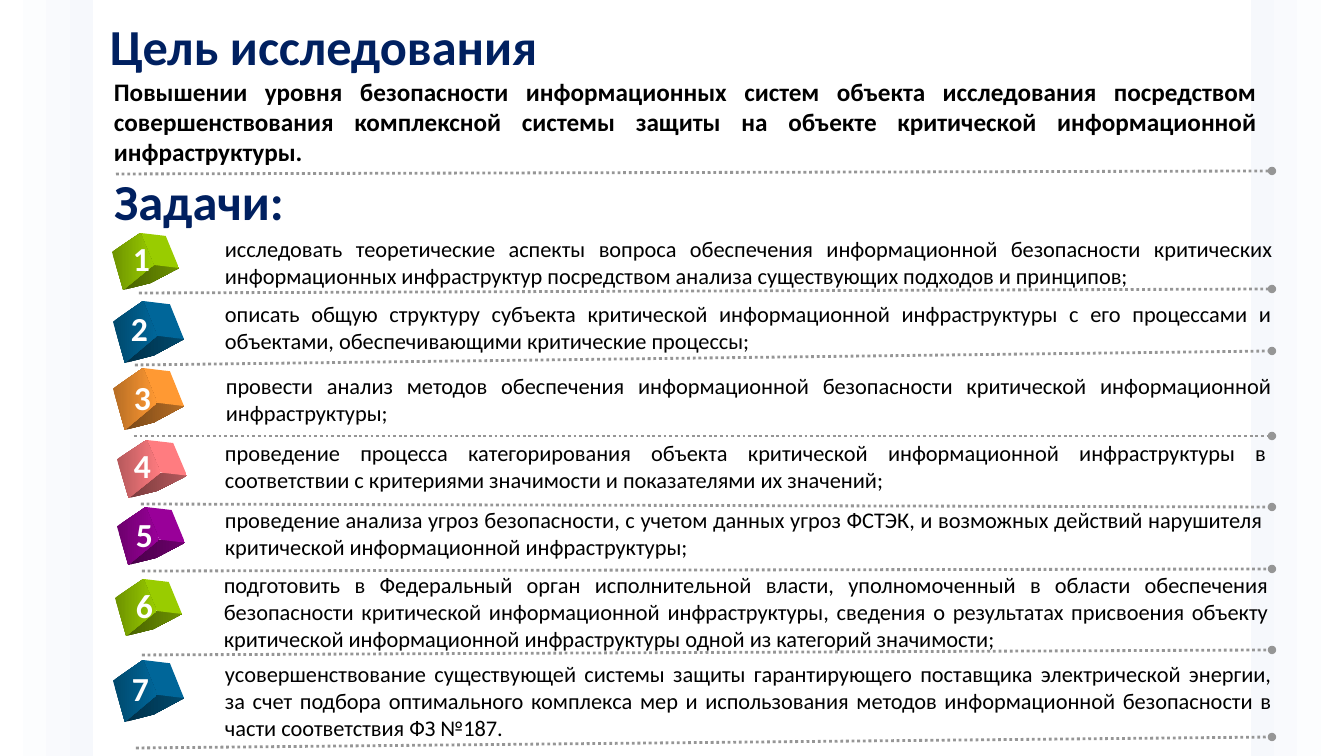
from dataclasses import dataclass

from lxml.etree import SubElement
from pptx import Presentation
from pptx.dml.color import RGBColor
from pptx.enum.dml import MSO_LINE
from pptx.enum.shapes import MSO_CONNECTOR, MSO_SHAPE
from pptx.enum.text import MSO_ANCHOR, MSO_AUTO_SIZE, PP_ALIGN
from pptx.oxml.ns import qn
from pptx.util import Emu, Pt

EMU_PER_PX = 914400 / 100.8
SLIDE_WIDTH, SLIDE_HEIGHT = 1344, 756
FONT = "Calibri"

WHITE = RGBColor(0xFF, 0xFF, 0xFF)
BLACK = RGBColor(0x00, 0x00, 0x00)
NAVY = RGBColor(0x00, 0x20, 0x60)
GRAY = RGBColor(0x96, 0x96, 0x96)
PALE_BLUE = RGBColor(0xF6, 0xF8, 0xFC)
# Each cube has a light and a dark shade
GREEN = RGBColor(0x99, 0xCC, 0x00), RGBColor(0x6D, 0x92, 0x00)
BLUE = RGBColor(0x00, 0x66, 0x99), RGBColor(0x00, 0x49, 0x6D)
ORANGE = RGBColor(0xFF, 0x99, 0x33), RGBColor(0xB6, 0x6D, 0x24)
PINK = RGBColor(0xFF, 0x7C, 0x80), RGBColor(0xB6, 0x59, 0x5C)
PURPLE = RGBColor(0x99, 0x00, 0x99), RGBColor(0x6D, 0x00, 0x6D)

# Cube faces on a grid of 66 by 57 px
CUBE_WIDTH, CUBE_HEIGHT = 66, 57
FRONT_FACE = (0, 19), (28, 0), (41, 32), (11, 57)
RIGHT_FACE = (28, 0), (53, 3), (66, 35), (41, 32)
BOTTOM_FACE = (41, 32), (66, 35), (38, 50), (11, 57)

RULE_END = 1272


@dataclass
class Task:
    wording: str
    shades: tuple[RGBColor, RGBColor]
    text_box: tuple[int, int, int, int]
    cube_box: tuple[int, int, int, int]
    number_at: tuple[int, int]
    rule: tuple[int, int, int]  # start x, start y, end y


TASKS = [
    Task("исследовать теоретические аспекты вопроса обеспечения информационной безопасности "
         "критических информационных инфраструктур посредством анализа существующих подходов "
         "и принципов;",
         GREEN, (215, 230, 1068, 65), (112, 233, 67, 57), (123, 233), (139, 293, 289)),
    Task("описать общую структуру субъекта критической информационной инфраструктуры с его "
         "процессами и объектами, обеспечивающими критические процессы;",
         BLUE, (215, 295, 1067, 65), (113, 301, 71, 62), (121, 303), (135, 365, 351)),
    Task("провести анализ методов обеспечения информационной безопасности критической "
         "информационной инфраструктуры;",
         ORANGE, (216, 367, 1066, 65), (113, 368, 71, 62), (124, 372), (134, 436, 436)),
    Task("проведение процесса категорирования объекта критической информационной "
         "инфраструктуры в соответствии с критериями значимости и показателями их значений;",
         PINK, (215, 434, 1062, 65), (117, 440, 70, 58), (124, 440), (141, 504, 507)),
    Task("проведение анализа угроз безопасности, с учетом данных угроз ФСТЭК, и возможных "
         "действий нарушителя критической информационной инфраструктуры;",
         PURPLE, (215, 501, 1058, 65), (117, 507, 68, 58), (126, 509), (142, 571, 569)),
    Task("подготовить в Федеральный орган исполнительной власти, уполномоченный в области "
         "обеспечения безопасности критической информационной инфраструктуры, сведения о "
         "результатах присвоения объекту критической информационной инфраструктуры одной из "
         "категорий значимости;",
         GREEN, (214, 566, 1065, 92), (115, 579, 67, 57), (126, 580), (142, 655, 650)),
    Task("усовершенствование существующей системы защиты гарантирующего поставщика "
         "электрической энергии, за счет подбора оптимального комплекса мер и использования "
         "методов информационной безопасности в части соответствия ФЗ №187.",
         BLUE, (215, 655, 1067, 92), (113, 660, 71, 62), (122, 663), (136, 748, 737)),
]


def px(length: float) -> Emu:
    return Emu(round(length * EMU_PER_PX))


def place(shape, box: tuple[int, int, int, int]) -> None:
    shape.left, shape.top, shape.width, shape.height = map(px, box)


def write(shape, text: str, *, size: int, color: RGBColor, bold: bool = False,
          align=PP_ALIGN.LEFT, anchor=MSO_ANCHOR.TOP, spacing: float = 1.0) -> None:
    frame = shape.text_frame
    frame.word_wrap = True
    frame.auto_size = MSO_AUTO_SIZE.NONE
    frame.vertical_anchor = anchor
    frame.text = text
    paragraph = frame.paragraphs[0]
    paragraph.alignment = align
    paragraph.line_spacing = spacing
    font = paragraph.runs[0].font
    font.name, font.size, font.bold = FONT, Pt(size), bold
    font.color.rgb = color


def add_text(slide, text: str, box: tuple[int, int, int, int], **text_format) -> None:
    text_box = slide.shapes.add_textbox(*map(px, box))
    write(text_box, text, **text_format)


def fill_across(shape, left_color: RGBColor, right_color: RGBColor) -> None:
    shape.fill.gradient()
    shape.fill.gradient_angle = 0
    left_stop, right_stop = shape.fill.gradient_stops
    left_stop.color.rgb, right_stop.color.rgb = left_color, right_color
    shape.line.fill.background()
    shape.shadow.inherit = False


def add_side_panel(slide, left: int, left_color: RGBColor, right_color: RGBColor) -> None:
    panel = slide.shapes.add_shape(MSO_SHAPE.RECTANGLE,
                                   *map(px, (left, 0, 93, SLIDE_HEIGHT)))
    fill_across(panel, left_color, right_color)


def add_dotted_rule(slide, start_x: int, start_y: int, end_y: int) -> None:
    rule = slide.shapes.add_connector(MSO_CONNECTOR.STRAIGHT,
                                      *map(px, (start_x, start_y, RULE_END, end_y)))
    rule.line.color.rgb = GRAY
    rule.line.width = Pt(2)
    rule.line.dash_style = MSO_LINE.ROUND_DOT
    SubElement(rule.line._get_or_add_ln(), qn("a:tailEnd"), type="oval")
    SubElement(rule._element.spPr, qn("a:effectLst"))


def add_cube(slide, box: tuple[int, int, int, int],
             shades: tuple[RGBColor, RGBColor]) -> None:
    left, top, width, height = box
    light, dark = shades
    darkest = RGBColor(*(channel * 2 // 3 for channel in dark))
    faces = (BOTTOM_FACE, darkest, dark), (RIGHT_FACE, light, light), (FRONT_FACE, dark, light)
    for corners, left_color, right_color in faces:
        points = [(px(left + x * width / CUBE_WIDTH), px(top + y * height / CUBE_HEIGHT))
                  for x, y in corners]
        outline = slide.shapes.build_freeform(*points[0])
        outline.add_line_segments(points[1:])
        fill_across(outline.convert_to_shape(), left_color, right_color)


def add_task(slide, number: int, task: Task) -> None:
    add_dotted_rule(slide, *task.rule)
    add_cube(slide, task.cube_box, task.shades)
    add_text(slide, task.wording, task.text_box, size=16, color=BLACK,
             align=PP_ALIGN.JUSTIFY)
    add_text(slide, str(number), (*task.number_at, 41, 50), size=24, color=WHITE, bold=True)


def main() -> None:
    presentation = Presentation()
    presentation.slide_width, presentation.slide_height = px(SLIDE_WIDTH), px(SLIDE_HEIGHT)
    slide = presentation.slides.add_slide(presentation.slide_layouts[5])

    # Side panels
    add_side_panel(slide, 0, WHITE, PALE_BLUE)
    add_side_panel(slide, SLIDE_WIDTH - 93, PALE_BLUE, WHITE)

    # Headings
    heading_format = dict(size=36, color=NAVY, bold=True, anchor=MSO_ANCHOR.MIDDLE, spacing=0.9)
    tasks_heading = slide.shapes.title
    place(tasks_heading, (104, 169, 205, 70))
    write(tasks_heading, "Задачи:", **heading_format)
    add_text(slide, "Цель исследования", (100, 7, 546, 85), **heading_format)

    # Goal
    add_dotted_rule(slide, 116, 174, 171)
    add_text(slide, "Повышении уровня безопасности информационных систем объекта исследования "
             "посредством совершенствования комплексной системы защиты на объекте критической "
             "информационной инфраструктуры.",
             (104, 71, 1163, 103), size=18, color=BLACK, bold=True, align=PP_ALIGN.JUSTIFY)

    # Numbered tasks
    for number, task in enumerate(TASKS, start=1):
        add_task(slide, number, task)

    presentation.save("out.pptx")


if __name__ == "__main__":
    main()
